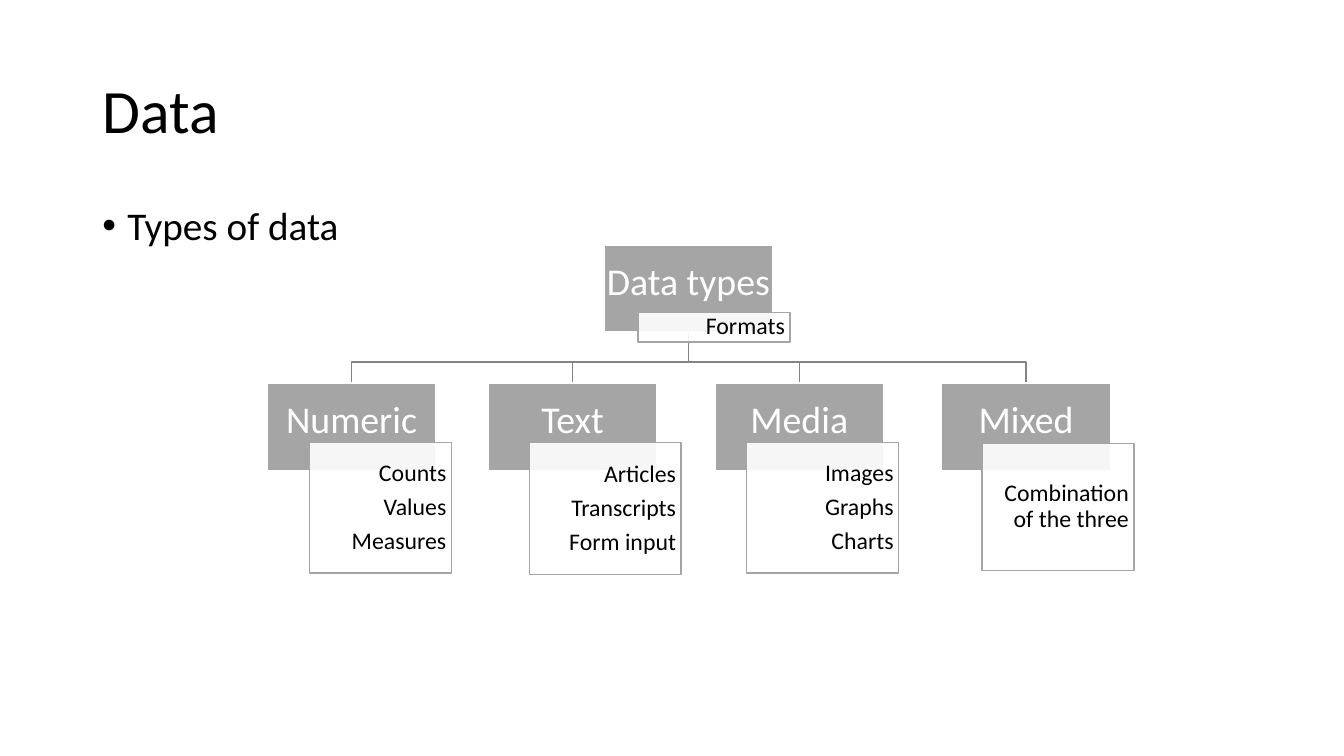
from lxml.etree import SubElement
from pptx import Presentation
from pptx.dml.color import RGBColor
from pptx.enum.shapes import MSO_SHAPE as Shape
from pptx.enum.text import MSO_ANCHOR as Anchor, PP_ALIGN as Align
from pptx.oxml.ns import qn
from pptx.util import Inches, Pt

WHITE = RGBColor(0xFF, 0xFF, 0xFF)
BLACK = RGBColor(0x00, 0x00, 0x00)
GRAY = RGBColor(0xA5, 0xA5, 0xA5)
LINK_GRAY = RGBColor(0x84, 0x84, 0x84)
FONT = "Calibri"

# Grid of 32 columns by 18 rows, in square cells
CELL = Inches(40 / 3) / 32
CARD_W, CARD_H = 4.02, 2.08
ROOT_X, ROOT_Y = 14.38, 5.83
BUS_Y, BRANCH_Y = 8.62, 9.12


def cells(*counts):
    return [round(count * CELL) for count in counts]


def write(frame, lines, size=17, color=BLACK, align=Align.LEFT, anchor=Anchor.MIDDLE,
          insets=(0.1, 0.05, 0.1, 0.05), after=0, wrap=True):
    frame.word_wrap = wrap
    frame.vertical_anchor = anchor
    (frame.margin_left, frame.margin_top,
     frame.margin_right, frame.margin_bottom) = map(Inches, insets)
    for i, line in enumerate(lines):
        para = frame.add_paragraph() if i else frame.paragraphs[0]
        para.alignment, para.line_spacing, para.space_after = align, 0.9, Pt(after)
        run = para.add_run()
        run.text = line
        run.font.name, run.font.size, run.font.color.rgb = FONT, Pt(size), color


class DataSlide:
    def __init__(self, deck):
        self.slide = deck.slides.add_slide(deck.slide_layouts[5])
        self.shapes = self.slide.shapes

    def title(self, text, x, y, w, h):
        heading = self.shapes.title
        heading.left, heading.top, heading.width, heading.height = cells(x, y, w, h)
        write(heading.text_frame, [text], size=44)

    def bullets(self, lines, x, y, w, h):
        frame = self.shapes.add_textbox(*cells(x, y, w, h)).text_frame
        write(frame, lines, size=28, anchor=Anchor.TOP)
        for para in frame.paragraphs:
            props = para._p.get_or_add_pPr()
            props.set("marL", str(Inches(0.25)))
            props.set("indent", str(-Inches(0.25)))
            SubElement(props, qn("a:buFont")).set("typeface", "Arial")
            SubElement(props, qn("a:buChar")).set("char", "•")

    def box(self, x, y, w, h, fill, line):
        rect = self.shapes.add_shape(Shape.RECTANGLE, *cells(x, y, w, h))
        rect.shadow.inherit = False
        rect.fill.solid()
        rect.fill.fore_color.rgb = fill
        rect.line.color.rgb, rect.line.width = line, Pt(1)
        return rect

    def card(self, text, x, y):
        rect = self.box(x, y, CARD_W, CARD_H, GRAY, WHITE)
        write(rect.text_frame, [text], size=27, color=WHITE, align=Align.CENTER,
              insets=(0.02, 0.02, 0.02, 0.12), wrap=False)

    def note(self, lines, x, y, w, h):
        rect = self.box(x, y, w, h, WHITE, GRAY)
        color = rect._element.spPr.find(qn("a:solidFill"))[0]
        SubElement(color, qn("a:alpha")).set("val", "90000")
        write(rect.text_frame, lines, align=Align.RIGHT,
              insets=(0.05, 0.01, 0.05, 0.01), after=6)

    def link(self, branch_x):
        root, branch = ROOT_X + CARD_W / 2, branch_x + CARD_W / 2
        start, *bends = [cells(*point) for point in (
            (root, ROOT_Y + CARD_H), (root, BUS_Y), (branch, BUS_Y), (branch, BRANCH_Y))]
        builder = self.shapes.build_freeform(*start)
        builder.add_line_segments(bends, close=False)
        elbow = builder.convert_to_shape()
        elbow.shadow.inherit = False
        elbow.fill.background()
        elbow.line.color.rgb, elbow.line.width = LINK_GRAY, Pt(1)


# Branch name, card column, note lines, note place (column, row, width, height)
BRANCHES = [
    ("Numeric", 6.36, ["Counts", "Values", "Measures"], (7.37, 10.54, 3.38, 3.1)),
    ("Text", 11.62, ["Articles", "Transcripts", "Form input"], (12.6, 10.54, 3.62, 3.14)),
    ("Media", 17.02, ["Images", "Graphs", "Charts"], (17.78, 10.54, 3.62, 3.1)),
    ("Mixed", 22.42, ["Combination of the three"], (23.38, 10.56, 3.62, 3.02)),
]


def main():
    deck = Presentation()
    deck.slide_width, deck.slide_height = cells(32, 18)
    data = DataSlide(deck)

    # Heading and lead point
    data.title("Data", 2.2, 0.96, 27.6, 3.48)
    data.bullets(["Types of data"], 2.2, 4.8, 27.6, 11.42)

    # Links lie behind the cards
    for _, column, _, _ in BRANCHES:
        data.link(column)

    # Root of the tree
    data.card("Data types", ROOT_X, ROOT_Y)
    data.note(["Formats"], 15.19, 7.44, 3.62, 0.7)

    # Branches
    for name, column, examples, place in BRANCHES:
        data.card(name, column, BRANCH_Y)
        data.note(examples, *place)

    deck.save("out.pptx")


if __name__ == "__main__":
    main()
